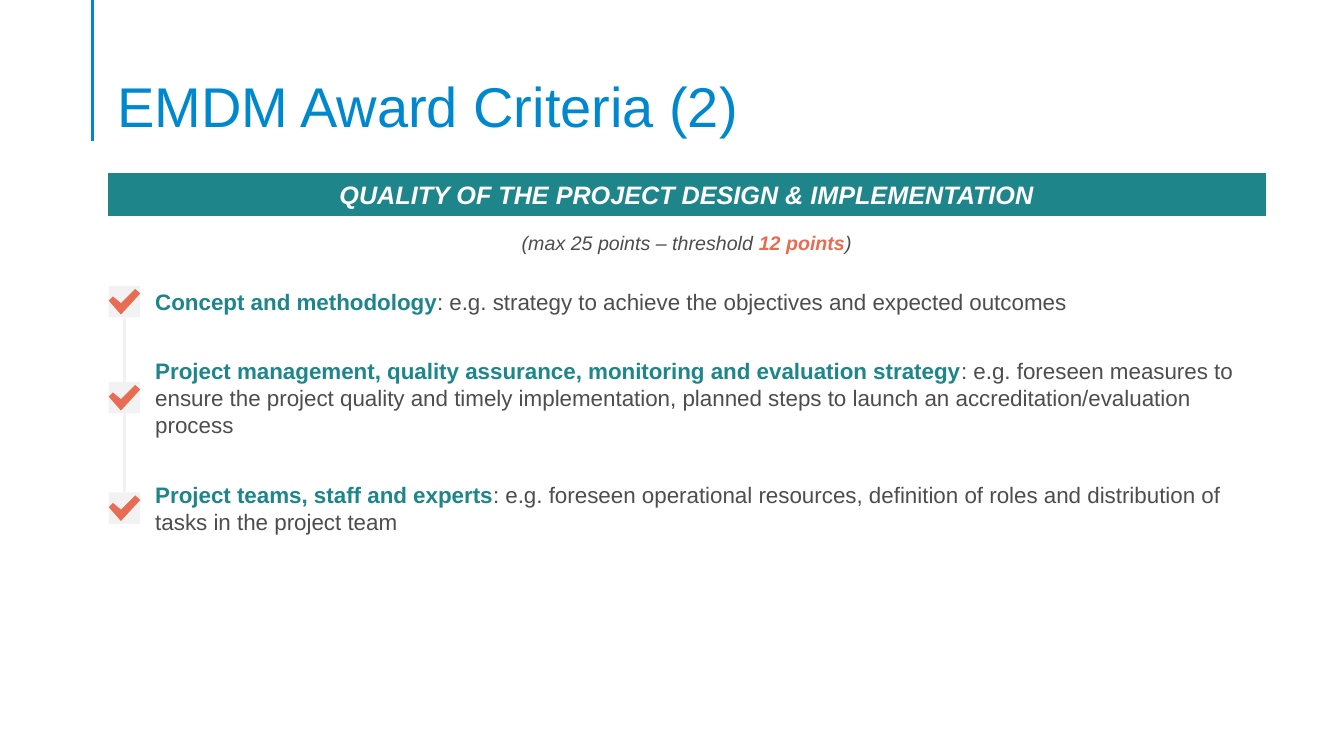
from dataclasses import dataclass

from lxml.etree import SubElement
from pptx import Presentation
from pptx.dml.color import RGBColor
from pptx.enum.shapes import MSO_CONNECTOR, MSO_SHAPE
from pptx.enum.text import MSO_ANCHOR, MSO_AUTO_SIZE, PP_ALIGN
from pptx.oxml.ns import qn
from pptx.util import Emu, Pt

COLS, ROWS = 160, 90
CELL = 76200
FONT = "Arial"
COLORS = {
    "blue": "0088CE",
    "teal": "1E858B",
    "coral": "E76C53",
    "text": "4D4D4D",
    "pale": "F2F2F2",
    "white": "FFFFFF",
}
LEFT, WIDTH = 12.75, 138
BOX_LEFT, BOX_SIZE = 12.95, 3.75
TEXT_LEFT, TEXT_WIDTH = 17.3, 133.45
CHECK_POINTS = [(1.45, 3.4), (0, 1.75), (0.5, 1.25), (1.45, 2.05), (3.15, 0.35), (3.75, 0.9)]


@dataclass(frozen=True)
class Run:
    text: str
    color: str
    bold: bool = False
    italic: bool = False


@dataclass(frozen=True)
class Criterion:
    top: float
    height: float
    name: str
    detail: str

    @property
    def box_top(self) -> float:
        return self.top + (self.height - BOX_SIZE) / 2


CRITERIA = [
    Criterion(33.7, 4.45, "Concept and methodology",
              ": e.g. strategy to achieve the objectives and expected outcomes"),
    Criterion(41.9, 10.9, "Project management, quality assurance, monitoring and evaluation strategy",
              ": e.g. foreseen measures to ensure the project quality and timely implementation, "
              "planned steps to launch an accreditation/evaluation process"),
    Criterion(56.65, 7.7, "Project teams, staff and experts",
              ": e.g. foreseen operational resources, definition of roles and distribution of "
              "tasks in the project team"),
]


def cells(*counts: float) -> list[Emu]:
    return [Emu(round(n * CELL)) for n in counts]


def rgb(name: str) -> RGBColor:
    return RGBColor.from_string(COLORS[name])


def add_runs(p, size: float, runs: list[Run]) -> None:
    for run in runs:
        r = p.add_run()
        r.text = run.text
        r.font.name, r.font.size = FONT, Pt(size)
        r.font.bold, r.font.italic = run.bold, run.italic
        r.font.color.rgb = rgb(run.color)


def paint(sp, color: str):
    sp.shadow.inherit = False
    sp.fill.solid()
    sp.fill.fore_color.rgb = rgb(color)
    sp.line.fill.background()
    return sp


def add_rect(s, left: float, top: float, width: float, height: float, color: str):
    return paint(s.shapes.add_shape(MSO_SHAPE.RECTANGLE, *cells(left, top, width, height)), color)


def add_text(s, left: float, top: float, width: float, height: float, size: float, runs: list[Run]):
    tf = s.shapes.add_textbox(*cells(left, top, width, height)).text_frame
    tf.word_wrap = True
    tf.auto_size = MSO_AUTO_SIZE.SHAPE_TO_FIT_TEXT
    p = tf.paragraphs[0]
    add_runs(p, size, runs)
    return p


def add_line(s, x1: float, y1: float, x2: float, y2: float, color: str, width: float):
    line = s.shapes.add_connector(MSO_CONNECTOR.STRAIGHT, *cells(x1, y1, x2, y2))
    line.line.color.rgb = rgb(color)
    line.line.width = Pt(width)
    SubElement(line._element.spPr, qn("a:effectLst"))
    return line


def add_check(s, left: float, top: float) -> None:
    points = [tuple(cells(left + x, top + y)) for x, y in CHECK_POINTS]
    builder = s.shapes.build_freeform(*points[0])
    builder.add_line_segments(points[1:], close=True)
    paint(builder.convert_to_shape(), "coral")


def add_title(s, text: str) -> None:
    title = s.shapes.title
    title.left, title.top, title.width, title.height = cells(LEFT, 6.35, WIDTH, 10.3)
    tf = title.text_frame
    tf.word_wrap = True
    tf.auto_size = MSO_AUTO_SIZE.NONE
    tf.vertical_anchor = MSO_ANCHOR.BOTTOM
    tf.margin_bottom = 0
    p = tf.paragraphs[0]
    p.alignment = PP_ALIGN.LEFT
    p.line_spacing = 0.9
    add_runs(p, 40, [Run(text, "blue")])


def add_band(s, text: str) -> None:
    band = add_rect(s, LEFT, 20.5, WIDTH, 5.25, "teal")
    band.line.color.rgb = rgb("white")
    band.line.width = Pt(1)
    tf = band.text_frame
    tf.vertical_anchor = MSO_ANCHOR.MIDDLE
    p = tf.paragraphs[0]
    p.alignment = PP_ALIGN.CENTER
    add_runs(p, 18, [Run(text, "white", bold=True, italic=True)])


def add_criteria(s, criteria: list[Criterion]) -> None:
    x = BOX_LEFT + BOX_SIZE / 2
    line = add_line(s, x, criteria[0].box_top, x, criteria[-1].box_top, "pale", 1.5)
    boxes = []
    for c in criteria:
        boxes.append(add_rect(s, BOX_LEFT, c.box_top, BOX_SIZE, BOX_SIZE, "pale"))
        add_check(s, BOX_LEFT, c.box_top)
        p = add_text(s, TEXT_LEFT, c.top, TEXT_WIDTH, c.height, 16,
                     [Run(c.name, "teal", bold=True), Run(c.detail, "text")])
        p.space_after = Pt(6)
    line.begin_connect(boxes[0], 2)
    line.end_connect(boxes[-1], 0)


def main() -> None:
    prs = Presentation()
    prs.slide_width, prs.slide_height = cells(COLS, ROWS)
    s = prs.slides.add_slide(prs.slide_layouts[5])
    add_line(s, 11.05, 0, 11.05, 16.8, "blue", 2.25)
    add_title(s, "EMDM Award Criteria (2)")
    add_band(s, "QUALITY OF THE PROJECT DESIGN & IMPLEMENTATION")
    p = add_text(s, LEFT, 26.9, WIDTH, 4.05, 14, [
        Run("(max 25 points – threshold ", "text", italic=True),
        Run("12 points", "coral", bold=True, italic=True),
        Run(")", "text", italic=True),
    ])
    p.alignment = PP_ALIGN.CENTER
    add_criteria(s, CRITERIA)
    prs.save("out.pptx")


if __name__ == "__main__":
    main()
